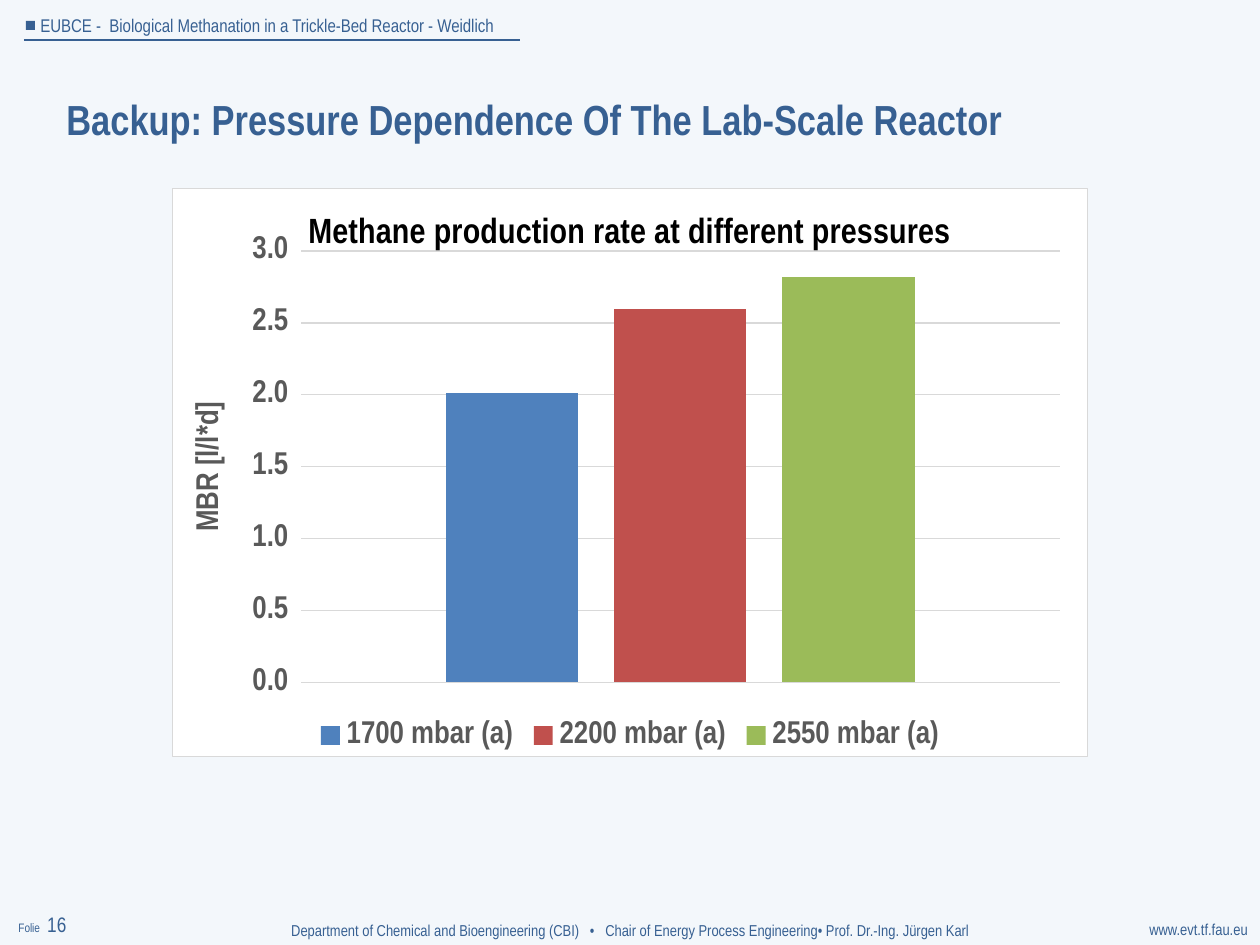
from lxml import etree
from pptx import Presentation, util as u
from pptx.chart.data import CategoryChartData
from pptx.dml.color import RGBColor
from pptx.enum import chart as ch, shapes, text
from pptx.oxml import parse_xml
from pptx.oxml.ns import nsdecls, qn

BACKGROUND = RGBColor(0xF3, 0xF7, 0xFB)
NAVY = RGBColor(0x37, 0x60, 0x92)
BLACK = RGBColor(0, 0, 0)
GREY = RGBColor(0x59, 0x59, 0x59)
GRID = RGBColor(0xD9, 0xD9, 0xD9)
BLUE = RGBColor(0x4F, 0x81, 0xBD)
RED = RGBColor(0xC0, 0x50, 0x4D)
GREEN = RGBColor(0x9B, 0xBB, 0x59)
LEFT, CENTER, RIGHT = text.PP_ALIGN.LEFT, text.PP_ALIGN.CENTER, text.PP_ALIGN.RIGHT


class Deck:
    """Holds the slide, its font and its pixel scale, and draws each kind of element."""

    font = "Arial Narrow"
    px = u.Inches(1) / 126

    def __init__(self, width, height):
        self.prs = Presentation()
        self.prs.slide_width, self.prs.slide_height = self.emu(width, height)
        self.s = self.prs.slides.add_slide(self.prs.slide_layouts[6])
        fill = self.s.background.fill
        fill.solid()
        fill.fore_color.rgb = BACKGROUND

    def emu(self, *lengths):
        return [u.Emu(round(n * self.px)) for n in lengths]

    def style(self, font, size, color, bold=False):
        for key, value in {"name": self.font, "size": u.Pt(size), "bold": bold}.items():
            setattr(font, key, value)
        font.color.rgb = color

    def text(self, box, runs, align=LEFT, bold=False):
        tf = self.s.shapes.add_textbox(*self.emu(*box)).text_frame
        tf.word_wrap = True
        p = tf.paragraphs[0]
        p.alignment = align
        for words, size in runs:
            r = p.add_run()
            r.text = words
            self.style(r.font, size, NAVY, bold)

    def rect(self, box):
        sp = self.s.shapes.add_shape(shapes.MSO_SHAPE.RECTANGLE, *self.emu(*box))
        sp.shadow.inherit = False
        sp.fill.solid()
        sp.fill.fore_color.rgb = NAVY
        sp.line.fill.background()

    def line(self, ends):
        c = self.s.shapes.add_connector(shapes.MSO_CONNECTOR.STRAIGHT, *self.emu(*ends))
        c.line.color.rgb = NAVY
        c.line.width = u.Pt(1)
        etree.SubElement(c._element.spPr, qn("a:effectLst"))

    def title(self, owner, words, size, color):
        tf = owner.text_frame
        tf.text = words
        self.style(tf.paragraphs[0].runs[0].font, size, color, True)

    def chart(self, box, title, unit, series, layout):
        data = CategoryChartData(number_format="0.00")
        data.categories = ["1"]
        for name, value, _ in series:
            data.add_series(name, [value])
        kind = ch.XL_CHART_TYPE.COLUMN_CLUSTERED
        chart = self.s.shapes.add_chart(kind, *self.emu(*box), data).chart
        self.style(chart.font, 14, BLACK)
        self.title(chart.chart_title, title, 20, BLACK)
        chart.chart_title.include_in_layout = False
        chart.has_legend = True
        chart.legend.position = ch.XL_LEGEND_POSITION.BOTTOM
        chart.legend.include_in_layout = False
        self.style(chart.legend.font, 18, GREY, True)
        plot = chart.plots[0]
        for key, value in {"gap_width": 219, "overlap": -27, "vary_by_categories": False}.items():
            setattr(plot, key, value)
        for bars, (_, _, color) in zip(plot.series, series):
            bars.format.fill.solid()
            bars.format.fill.fore_color.rgb = color
        chart.category_axis.visible = False
        axis = chart.value_axis
        for key, value in {"minimum_scale": 0, "maximum_scale": 3, "major_unit": 0.5}.items():
            setattr(axis, key, value)
        axis.tick_labels.number_format = "0.0"
        axis.tick_labels.number_format_is_linked = False
        self.style(axis.tick_labels.font, 18, GREY, True)
        self.title(axis.axis_title, unit, 18, GREY)
        axis.format.line.fill.background()
        axis.major_gridlines.format.line.color.rgb = GRID
        axis.major_gridlines.format.line.width = u.Pt(0.75)
        self.frame(chart, layout)

    def frame(self, chart, layout):
        root = chart._chartSpace
        area = root.find(".//" + qn("c:plotArea"))
        for old in area.findall(qn("c:layout")):
            area.remove(old)
        modes = '<c:layoutTarget val="inner"/><c:xMode val="edge"/><c:yMode val="edge"/>'
        sizes = "".join(f'<c:{k} val="{v}"/>' for k, v in zip("xywh", layout))
        area.insert(0, parse_xml(
            f'<c:layout {nsdecls("c")}><c:manualLayout>{modes}{sizes}</c:manualLayout></c:layout>'))
        root.find(qn("c:chart")).addnext(parse_xml(
            f'<c:spPr {nsdecls("c", "a")}><a:solidFill><a:srgbClr val="FFFFFF"/></a:solidFill>'
            f'<a:ln w="{u.Pt(0.75)}"><a:solidFill><a:srgbClr val="{GRID}"/></a:solidFill></a:ln></c:spPr>'))


def main():
    deck = Deck(1260, 945)
    deck.text((1013, 914, 247, 32), [("www.evt.tf.fau.eu", 9)], RIGHT)
    deck.text((0, 915, 1260, 32), [(
        "Department of Chemical and Bioengineering (CBI)   •   "
        "Chair of Energy Process Engineering• Prof. Dr.-Ing. Jürgen Karl", 9)], CENTER)
    deck.text((28, 8, 663, 35), [(
        "EUBCE -  Biological Methanation in a Trickle-Bed Reactor - Weidlich", 10.5)])
    deck.line((24, 40, 520, 40))
    deck.rect((26, 21, 9, 9))
    deck.text((6, 895, 294, 50), [("Folie", 7), (" ", 18), ("16", 12)])
    deck.chart(
        (172, 188, 916, 569), "Methane production rate at different pressures", "MBR [l/l*d]",
        [("1700 mbar (a)", 2.01, BLUE), ("2200 mbar (a)", 2.6, RED), ("2550 mbar (a)", 2.82, GREEN)],
        (0.14, 0.11, 0.83, 0.76))
    deck.text((54, 87, 973, 49),
              [("Backup: Pressure Dependence Of The Lab-Scale Reactor", 24)], bold=True)
    deck.prs.save("out.pptx")


if __name__ == "__main__":
    main()
